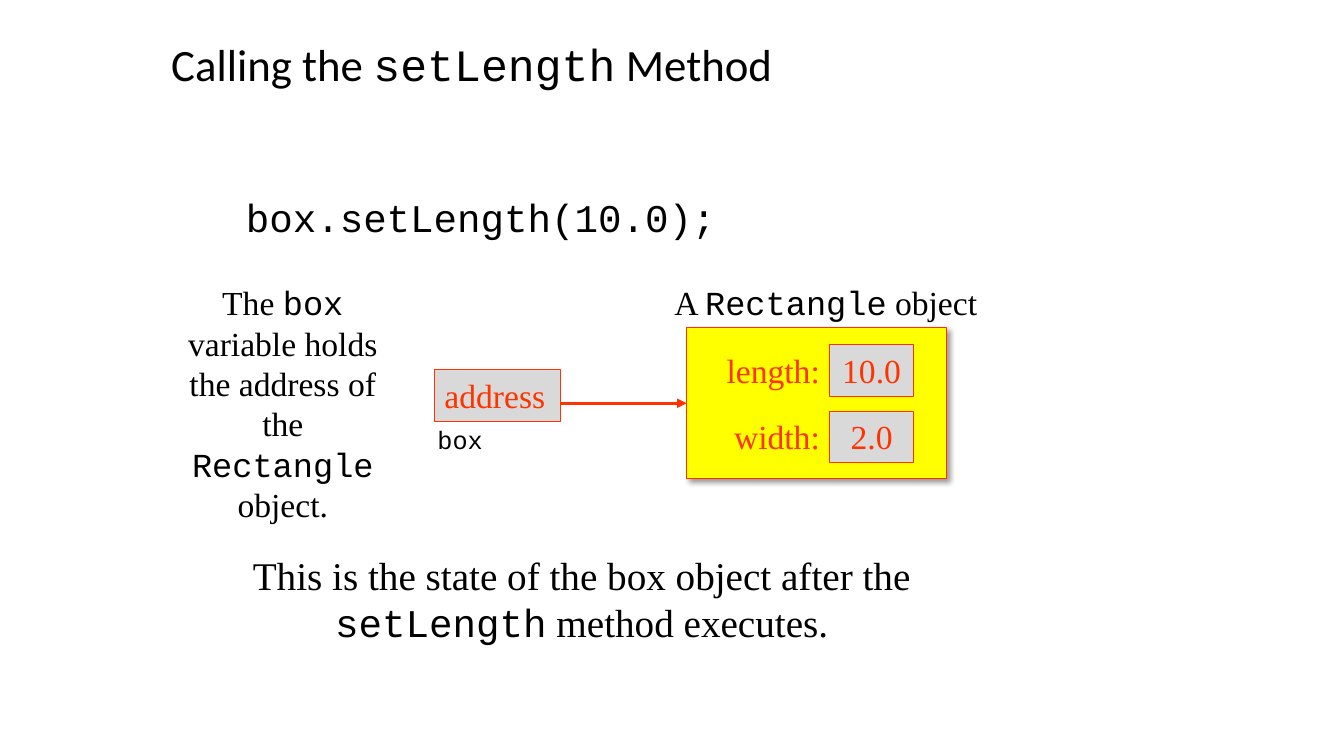
from lxml import etree
from pptx import Presentation
from pptx.dml.color import RGBColor
from pptx.enum.shapes import MSO_CONNECTOR, MSO_SHAPE
from pptx.enum.text import MSO_ANCHOR, MSO_AUTO_SIZE, PP_ALIGN
from pptx.oxml import parse_xml
from pptx.oxml.ns import nsdecls, qn
from pptx.util import Inches, Pt

LEFT, CENTER, RIGHT = PP_ALIGN.LEFT, PP_ALIGN.CENTER, PP_ALIGN.RIGHT
MIDDLE = MSO_ANCHOR.MIDDLE
GROW = MSO_AUTO_SIZE.SHAPE_TO_FIT_TEXT
RECTANGLE = MSO_SHAPE.RECTANGLE
STRAIGHT = MSO_CONNECTOR.STRAIGHT
LEFT_SIDE = 1

COLORS = {"ink": "000000", "accent": "FF3300", "object": "FFFF00", "value": "D9D9D9"}
SANS, SERIF, MONO = "Calibri", "Times New Roman", "Courier New"

# Each text: box (left, top, width, height), runs (text, font), size, format
TITLE = ((1.6, 0.16, 8.08, 1.01),
         [("Calling the ", SANS), ("setLength", MONO), (" Method", SANS)], 32,
         {"line_spacing": 0.9})
CODE = ((2.34, 1.92, 6.14, 0.73), [("box.setLength(10.0);", MONO)], 28,
        {"line_spacing": 0.9})
CAPTIONS = [
    ((1.64, 2.75, 2.33, 2.5),
     [("The ", SERIF), ("box ", MONO), ("variable holds the address of the ", SERIF),
      ("Rectangle", MONO), (" object.", SERIF)], 24, {"alignment": CENTER}),
    ((6.23, 2.75, 3.92, 0.5),
     [("A ", SERIF), ("Rectangle", MONO), (" object", SERIF)], 24, {"alignment": CENTER}),
    ((2.23, 5.42, 7.08, 1.04),
     [("This is the state of the box object after the ", SERIF), ("setLength", MONO),
      (" method executes.", SERIF)], 28, {"alignment": CENTER}),
    ((4.24, 4.16, 0.81, 0.4), [("box", MONO)], 18, {"alignment": LEFT}),
]
FIELDS = [("length:", "10.0"), ("width:", "2.0")]

OBJECT_BOX = (6.81, 3.25, 2.58, 1.5)
ADDRESS_BOX = (4.31, 3.67, 1.25, 0.51)
FIELD_TOP, FIELD_STEP = 3.42, 0.66
LABEL_LEFT, LABEL_WIDTH, LABEL_HEIGHT = 6.98, 1.25, 0.5
VALUE_WIDTH, VALUE_HEIGHT = 0.83, 0.51


def color(name):
    return RGBColor.from_string(COLORS[name])


def write(shape, runs, size, formats, ink="ink"):
    frame = shape.text_frame
    frame.word_wrap = True
    paragraph = frame.paragraphs[0]
    for name, value in {"space_before": Pt(0), **formats}.items():
        setattr(paragraph, name, value)
    for text, font_name in runs:
        run = paragraph.add_run()
        run.text = text
        for name, value in {"name": font_name, "size": Pt(size)}.items():
            setattr(run.font, name, value)
        run.font.color.rgb = color(ink)
    return frame


def add_text(slide, box, runs, size, formats, ink="ink"):
    shape = slide.shapes.add_textbox(*map(Inches, box))
    return write(shape, runs, size, formats, ink)


def add_rectangle(slide, box, fill):
    shape = slide.shapes.add_shape(RECTANGLE, *map(Inches, box))
    shape.shadow.inherit = False
    shape.fill.solid()
    shape.fill.fore_color.rgb = color(fill)
    shape.line.color.rgb = color("accent")
    shape.line.width = Pt(0.75)
    return shape


def add_value(slide, box, text, alignment):
    shape = add_rectangle(slide, box, "value")
    frame = write(shape, [(text, SERIF)], 24, {"alignment": alignment}, "accent")
    frame.vertical_anchor = MSO_ANCHOR.TOP
    frame.auto_size = GROW


def add_shadow(shape):
    effects = shape._element.spPr.find(qn("a:effectLst"))
    effects.append(parse_xml(
        f'<a:outerShdw {nsdecls("a")} blurRad="{Pt(4)}" dist="{Pt(3)}" dir="2700000" '
        f'algn="tl" rotWithShape="0"><a:srgbClr val="{COLORS["ink"]}">'
        '<a:alpha val="40000"/></a:srgbClr></a:outerShdw>'))


def add_arrow(slide, target):
    """Point from the address box to the left side of the target."""
    left, top, width, height = OBJECT_BOX
    middle = Inches(top + height / 2)
    start = Inches(ADDRESS_BOX[0] + ADDRESS_BOX[2])
    arrow = slide.shapes.add_connector(STRAIGHT, start, middle, Inches(left), middle)
    arrow.end_connect(target, LEFT_SIDE)
    arrow.line.color.rgb = color("accent")
    arrow.line.width = Pt(2.25)
    etree.SubElement(arrow.line._get_or_add_ln(), qn("a:tailEnd"), type="triangle")
    etree.SubElement(arrow._element.spPr, qn("a:effectLst"))


def main():
    presentation = Presentation()
    presentation.slide_width = Inches(13.33)
    presentation.slide_height = Inches(7.5)
    slide = presentation.slides.add_slide(presentation.slide_layouts[6])

    add_text(slide, *TITLE).vertical_anchor = MIDDLE
    rectangle_object = add_rectangle(slide, OBJECT_BOX, "object")
    add_shadow(rectangle_object)

    code_properties = add_text(slide, *CODE).paragraphs[0]._p.get_or_add_pPr()
    code_properties.set("marL", str(Inches(0.25)))
    code_properties.set("indent", str(-Inches(0.25)))

    add_value(slide, ADDRESS_BOX, "address", LEFT)
    for row, (label, value) in enumerate(FIELDS):
        top = FIELD_TOP + row * FIELD_STEP
        value_box = (LABEL_LEFT + LABEL_WIDTH, top, VALUE_WIDTH, VALUE_HEIGHT)
        add_value(slide, value_box, value, CENTER)
        label_box = (LABEL_LEFT, top, LABEL_WIDTH, LABEL_HEIGHT)
        frame = add_text(slide, label_box, [(label, SERIF)], 24,
                         {"alignment": RIGHT}, "accent")
        frame.auto_size = GROW

    add_arrow(slide, rectangle_object)
    for caption in CAPTIONS:
        add_text(slide, *caption).auto_size = GROW

    presentation.save("out.pptx")


if __name__ == "__main__":
    main()
